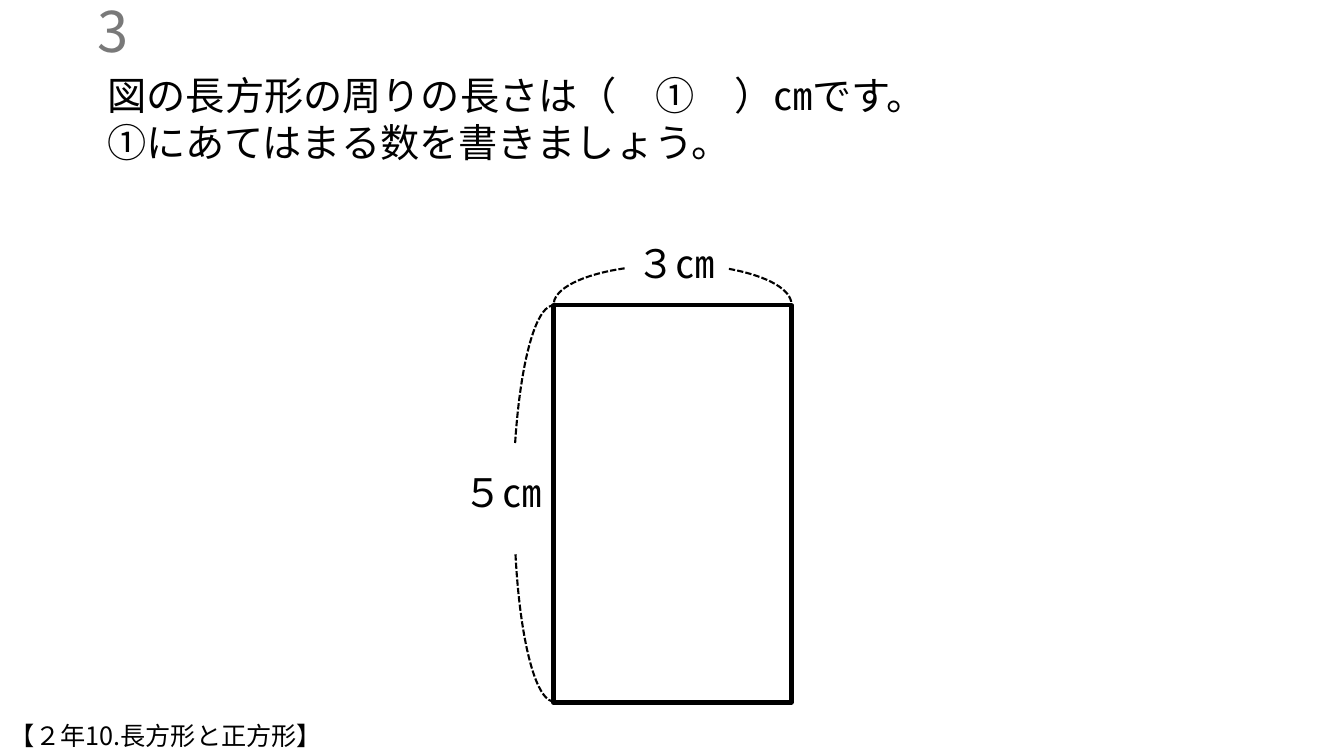
from collections import namedtuple

from lxml.etree import SubElement
from pptx import Presentation
from pptx.dml.color import RGBColor
from pptx.enum.dml import MSO_LINE
from pptx.enum.shapes import MSO_SHAPE as Shape
from pptx.enum.text import MSO_ANCHOR as Anchor, MSO_AUTO_SIZE as AutoSize, PP_ALIGN as Align
from pptx.oxml.ns import qn
from pptx.util import Emu, Pt

PX = 9144
FONT = "Noto Sans CJK JP"
BLACK, GREY = "000000", "797979"
Box = namedtuple("Box", "left top width height")


def emu(*lengths):
    """Turn pixel lengths into EMU."""
    return [Emu(length * PX) for length in lengths]


def colour(code):
    """Make a colour from a hex string."""
    return RGBColor.from_string(code)


def add_text(page, box, text, size, code=BLACK):
    """Add a wrapped text box in the slide font."""
    frame = page.shapes.add_textbox(*emu(*box)).text_frame
    frame.text = text
    frame.word_wrap = True
    frame.auto_size = AutoSize.SHAPE_TO_FIT_TEXT
    for para in frame.paragraphs:
        for span in para.runs:
            span.font.size = Pt(size)
            span.font.color.rgb = colour(code)
            span.font.name = FONT
            SubElement(span.font._element, qn("a:ea"), typeface=FONT)
    return frame


def add_outline(shapes, kind, box, width):
    """Add an unfilled black outline shape."""
    shape = shapes.add_shape(kind, *emu(*box))
    shape.shadow.inherit = False
    shape.fill.background()
    shape.line.color.rgb = colour(BLACK)
    shape.line.width = Pt(width)
    return shape


def add_brace(page, middle, lengths, shift, rotation):
    """Add a dashed pair of mirrored arcs centred on one side of the rectangle."""
    group = page.shapes.add_group_shape()
    parts = zip(lengths, (80, 79), (196.706, 193.003), ((0, 0), shift))
    for index, (length, depth, start, (right, down)) in enumerate(parts):
        box = Box(middle[0] - length // 2 + right, middle[1] - depth // 2 + down, length, depth)
        arc = add_outline(group.shapes, Shape.ARC, box, 1.5)
        arc.adjustments[0], arc.adjustments[1] = start, 0
        arc.line.dash_style = MSO_LINE.SQUARE_DOT
        arc.rotation = rotation
        if index:
            arc._element.spPr.get_or_add_xfrm().set("flipH", "1")


def add_question(page, box):
    """Add the question number and the question."""
    number = add_text(page, Box(0, box.top - 56, box.left + 40, 40), "3", 40, GREY)
    number.auto_size = AutoSize.NONE
    number.vertical_anchor = Anchor.MIDDLE
    number.paragraphs[0].alignment = Align.RIGHT
    question = "図の長方形の周りの長さは（　①　）㎝です。\n①にあてはまる数を書きましょう。"
    add_text(page, box, question, 28)


def add_figure(page, box):
    """Add the rectangle with its measured sides."""
    add_outline(page.shapes, Shape.RECTANGLE, box, 3)
    top_middle = box.left + box.width // 2, box.top - 1
    side_middle = box.left, box.top + box.height // 2
    add_brace(page, top_middle, (box.width, box.width - 3), (-2, 0), 0)
    add_brace(page, side_middle, (box.height, box.height - 5), (0, 1), 270)
    add_text(page, Box(box.left + 72, box.top - 70, 118, 57), "３㎝", 28)
    add_text(page, Box(box.left - 99, box.top + 157, 118, 57), "５㎝", 28)


def main():
    """Build and save the slide."""
    deck = Presentation()
    deck.slide_width, deck.slide_height = emu(1333, 750)
    page = deck.slides.add_slide(deck.slide_layouts[6])
    add_question(page, Box(97, 66, 1197, 104))
    add_figure(page, Box(549, 303, 236, 394))
    add_text(page, Box(0, 710, 749, 40), "【２年10.長方形と正方形】", 18)
    deck.save("out.pptx")


if __name__ == "__main__":
    main()
